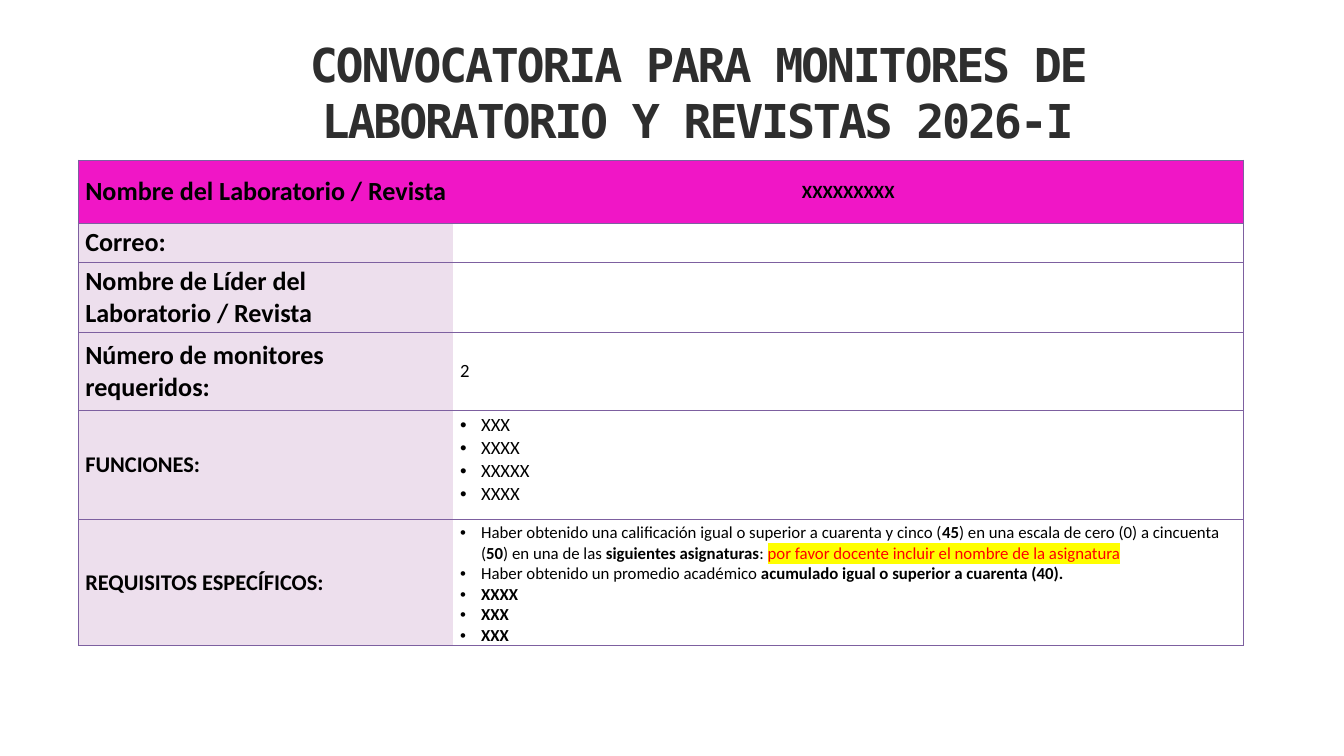
"""Build the call-for-monitors slide: a title over a two-column form table."""
from lxml import etree
from pptx import Presentation
from pptx import util as u
from pptx.dml.color import RGBColor
from pptx.enum import text as t
from pptx.oxml.ns import qn

TITLE = "CONVOCATORIA PARA MONITORES DE LABORATORIO Y REVISTAS 2026-I"
MAGENTA, LILAC, WHITE, PURPLE = "F016C6", "EDDFED", "FFFFFF", "7D60A0"
BLACK, RED, YELLOW = "000000", "FF0000", "FFFF00"

FUNCTIONS = [[("XXX", "")], [("XXXX", "")], [("XXXXX", "")], [("XXXX", "")]]
REQUIREMENTS = [
    [
        ("Haber obtenido una calificación igual o superior a cuarenta y cinco (", ""),
        ("45", "bold"),
        (") en una escala de cero (0) a cincuenta (", ""),
        ("50", "bold"),
        (") en una de las ", ""),
        ("siguientes asignaturas", "bold"),
        (": ", ""),
        ("por favor docente incluir el nombre de la asignatura", "marked"),
    ],
    [
        ("Haber obtenido un promedio académico ", ""),
        ("acumulado igual o superior a cuarenta (40).", "bold"),
    ],
    [("XXXX", "bold")],
    [("XXX", "bold")],
    [("XXX", "bold")],
]
# label, label size, content paragraphs, content size, bulleted, row height
ROWS = [
    ("Nombre del Laboratorio / Revista", 28, [[("XXXXXXXXX", "bold")]], 20, False, 2.39),
    ("Correo:", 28, [], 20, False, 1.42),
    ("Nombre de Líder del Laboratorio / Revista", 28, [], 20, False, 2.64),
    ("Número de monitores requeridos:", 28, [[("2", "")]], 20, False, 2.95),
    ("FUNCIONES:", 24, FUNCTIONS, 20, True, 4.11),
    ("REQUISITOS ESPECÍFICOS:", 24, REQUIREMENTS, 18, True, 4.75),
]
COLUMNS = [14.17, 29.85]


def color(code):
    return RGBColor.from_string(code)


def add_span(para, words, size, style="", font="Calibri", code=BLACK):
    span = para.add_run()
    span.text = words
    span.font.size = u.Pt(size)
    span.font.bold = style == "bold"
    span.font.color.rgb = color(RED if style == "marked" else code)
    if style == "marked":
        mark = etree.Element(qn("a:highlight"))
        etree.SubElement(mark, qn("a:srgbClr"), val=YELLOW)
        span.font._element.find(qn("a:solidFill")).addnext(mark)
    span.font.name = font
    return span


def add_bullet(para):
    props = para._p.get_or_add_pPr()
    props.set("marL", str(u.Cm(0.79)))
    props.set("indent", str(-u.Cm(0.79)))
    etree.SubElement(props, qn("a:buFont"), typeface="Arial")
    etree.SubElement(props, qn("a:buChar"), char="•")


def set_borders(cell, outer):
    props = cell._tc.get_or_add_tcPr()
    for index, side in enumerate("LRTB"):
        line = etree.Element(qn(f"a:ln{side}"), w=str(u.Pt(0.75)))
        if side in "TB" or side == outer:
            fill = etree.SubElement(line, qn("a:solidFill"))
            etree.SubElement(fill, qn("a:srgbClr"), val=PURPLE)
        else:
            etree.SubElement(line, qn("a:noFill"))
        props.insert(index, line)


def fill_cell(cell, paragraphs, size, bulleted, background, outer):
    cell.fill.solid()
    cell.fill.fore_color.rgb = color(background)
    set_borders(cell, outer)
    cell.vertical_anchor = t.MSO_ANCHOR.TOP if bulleted else t.MSO_ANCHOR.MIDDLE
    if bulleted:
        cell.margin_bottom = 0
    for index, spans in enumerate(paragraphs):
        para = cell.text_frame.add_paragraph() if index else cell.text_frame.paragraphs[0]
        if bulleted:
            add_bullet(para)
        for words, style in spans:
            add_span(para, words, size, style)


def add_title(page):
    box = page.shapes.title
    box.left, box.top, box.width, box.height = map(u.Cm, (8.03, 1.35, 36.7, 6.4))
    frame = box.text_frame
    frame.word_wrap = True
    frame.auto_size = t.MSO_AUTO_SIZE.NONE
    frame.vertical_anchor = t.MSO_ANCHOR.TOP
    frame.margin_left = frame.margin_right = frame.margin_top = frame.margin_bottom = 0
    para = frame.paragraphs[0]
    para.alignment = t.PP_ALIGN.CENTER
    para.line_spacing = u.Pt(60.1)
    span = add_span(para, TITLE, 50, "bold", "DejaVu Sans Mono", "2E2E2E")
    span.font._element.set("spc", "-240")


def add_form(page):
    height = sum(row[-1] for row in ROWS)
    table = page.shapes.add_table(
        len(ROWS), len(COLUMNS), u.Cm(2.97), u.Cm(6.05), u.Cm(sum(COLUMNS)), u.Cm(height)
    ).table
    table.first_row = table.horz_banding = False
    for column, width in zip(table.columns, COLUMNS):
        column.width = u.Cm(width)
    for index, (label, label_size, content, size, bulleted, height) in enumerate(ROWS):
        table.rows[index].height = u.Cm(height)
        header = index == 0
        left, right = table.cell(index, 0), table.cell(index, 1)
        fill_cell(left, [[(label, "bold")]], label_size, False, MAGENTA if header else LILAC, "L")
        fill_cell(right, content, size, bulleted, MAGENTA if header else WHITE, "R")
        if header:
            right.text_frame.paragraphs[0].alignment = t.PP_ALIGN.CENTER


def main():
    deck = Presentation()
    deck.slide_width, deck.slide_height = u.Cm(50.8), u.Cm(28.58)
    page = deck.slides.add_slide(deck.slide_layouts[5])
    add_title(page)
    add_form(page)
    deck.save("out.pptx")


if __name__ == "__main__":
    main()
